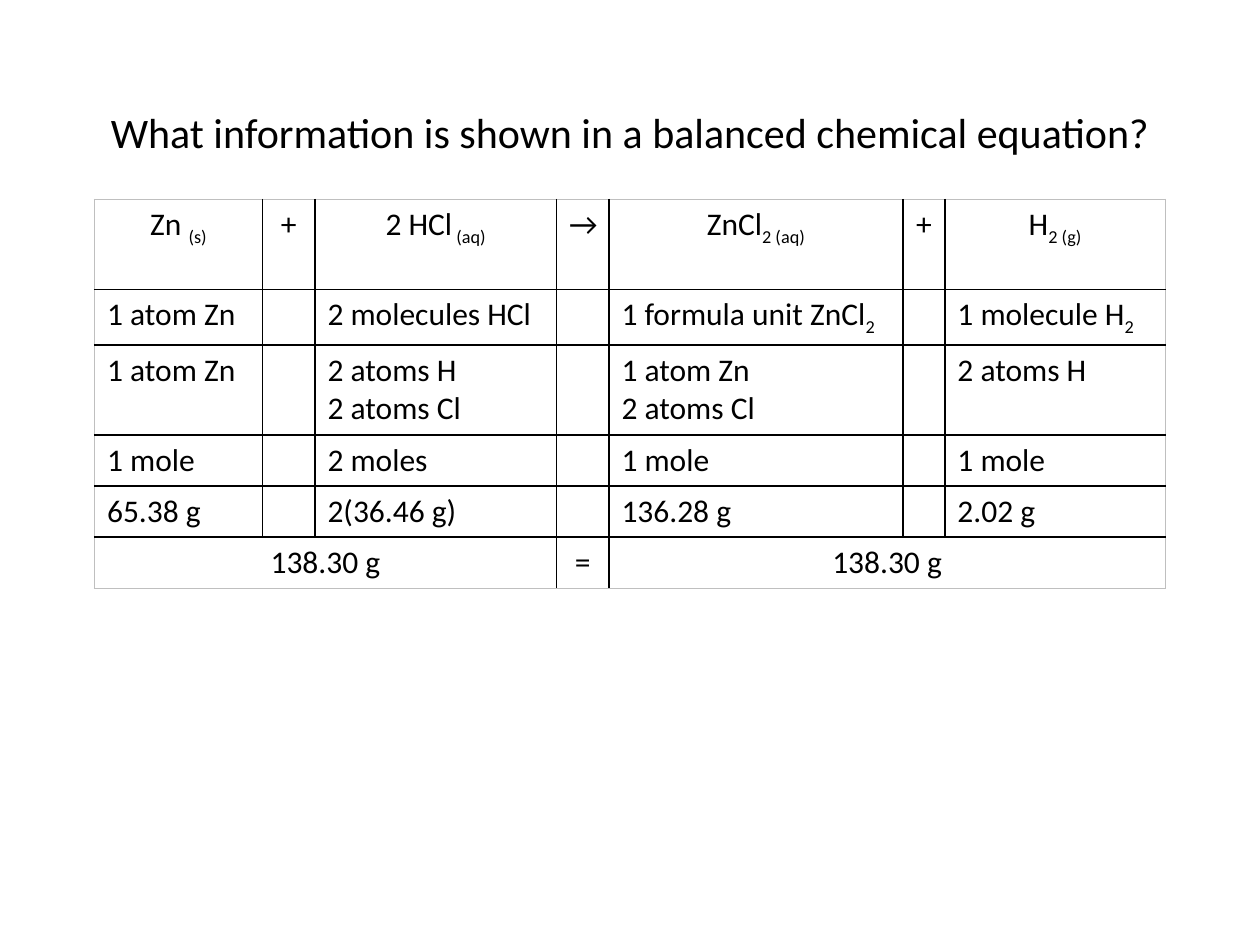
from lxml import etree
from pptx import Presentation
from pptx.dml.color import RGBColor
from pptx.enum.text import MSO_ANCHOR, PP_ALIGN
from pptx.oxml.ns import qn
from pptx.util import Pt

CENTER, LEFT = PP_ALIGN.CENTER, PP_ALIGN.LEFT
MIDDLE = MSO_ANCHOR.MIDDLE
FONT, BLACK, GREY = "Calibri", "000000", "BFBFBF"

TITLE = "What information is shown in a balanced chemical equation?"
COL_WIDTHS = [96, 30, 138, 30, 168, 24, 126]
ROW_HEIGHTS = [51.4, 31.4, 51.4, 29.2, 29.2, 29.2]
SUBSCRIPT_MARK = "_"
ROWS = [
    ["Zn _(s)", "+", "2 HCl_ (aq)", "→", "ZnCl_2 (aq)", "+", "H_2 (g)"],
    ["1 atom Zn", "", "2 molecules HCl", "", "1 formula unit ZnCl_2", "", "1 molecule H_2"],
    ["1 atom Zn", "", "2 atoms H\n2 atoms Cl", "", "1 atom Zn\n2 atoms Cl", "", "2 atoms H"],
    ["1 mole", "", "2 moles", "", "1 mole", "", "1 mole"],
    ["65.38 g", "", "2(36.46 g)", "", "136.28 g", "", "2.02 g"],
    ["138.30 g", "", "", "=", "138.30 g", "", ""],
]
CENTERED_ROWS = (0, len(ROWS) - 1)
TOTAL_SPANS = [(0, 2), (4, 6)]


def rgb(value):
    return RGBColor.from_string(value)


def style_run(r, size):
    r.font.name = FONT
    r.font.size = Pt(size)
    r.font.color.rgb = rgb(BLACK)


def add_title(slide, x, y, w, h):
    tf = slide.shapes.add_textbox(Pt(x), Pt(y), Pt(w), Pt(h)).text_frame
    tf.word_wrap = True
    tf.vertical_anchor = MIDDLE
    p = tf.paragraphs[0]
    p.text = TITLE
    p.alignment = CENTER
    style_run(p.runs[0], 24)


def write_formula(p, formula, align):
    p.alignment = align
    for i, part in enumerate(formula.split(SUBSCRIPT_MARK)):
        r = p.add_run()
        r.text = part
        style_run(r, 18)
        if i:
            r._r.get_or_add_rPr().set("baseline", "-25000")


def set_borders(cell, colors):
    tcPr = cell._tc.get_or_add_tcPr()
    for i, (side, color) in enumerate(zip("LRTB", colors)):
        ln = etree.Element(qn(f"a:ln{side}"), w=str(Pt(1)))
        fill = etree.SubElement(ln, qn("a:solidFill"))
        etree.SubElement(fill, qn("a:srgbClr"), val=color)
        tcPr.insert(i, ln)


def add_equation_table(slide, x, y, w, h):
    n_rows, n_cols = len(ROWS), len(COL_WIDTHS)
    table = slide.shapes.add_table(n_rows, n_cols, Pt(x), Pt(y), Pt(w), Pt(h)).table
    table.first_row = False
    table.horz_banding = False
    for column, width in zip(table.columns, COL_WIDTHS):
        column.width = Pt(width * w / sum(COL_WIDTHS))
    for row, height in zip(table.rows, ROW_HEIGHTS):
        row.height = Pt(height * h / sum(ROW_HEIGHTS))
    last = n_rows - 1
    for start, end in TOTAL_SPANS:
        table.cell(last, start).merge(table.cell(last, end))

    for i, row in enumerate(ROWS):
        align = CENTER if i in CENTERED_ROWS else LEFT
        for j, text in enumerate(row):
            cell = table.cell(i, j)
            cell.fill.background()
            span = cell.span_width if cell.is_merge_origin else 1
            outer = (j == 0, j + span == n_cols, i == 0, i == last)
            set_borders(cell, [GREY if edge else BLACK for edge in outer])
            if not text:
                continue
            tf = cell.text_frame
            for k, line in enumerate(text.split("\n")):
                p = tf.add_paragraph() if k else tf.paragraphs[0]
                write_formula(p, line, align)


def main():
    prs = Presentation()
    prs.slide_width, prs.slide_height = Pt(720), Pt(540)
    slide = prs.slides.add_slide(prs.slide_layouts[6])
    add_title(slide, 54, 48, 612, 54)
    add_equation_table(slide, 54, 114, 612, sum(ROW_HEIGHTS))
    prs.save("out.pptx")


if __name__ == "__main__":
    main()
